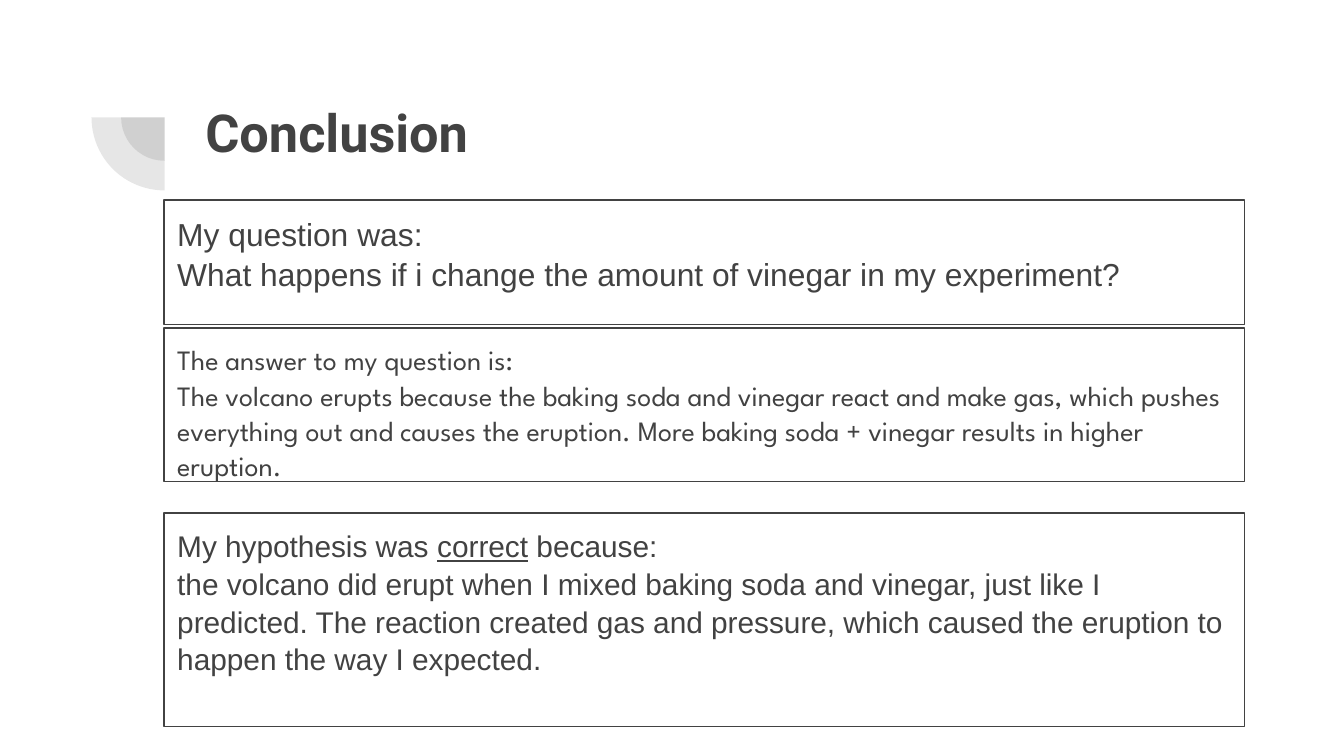
from lxml.etree import SubElement
from pptx import Presentation
from pptx.dml.color import RGBColor
from pptx.enum.shapes import MSO_SHAPE
from pptx.enum.text import MSO_ANCHOR, MSO_AUTO_SIZE, PP_ALIGN
from pptx.oxml.ns import qn
from pptx.util import Cm, Pt

# Content
HEADING = "Conclusion"
UNDERLINED = "correct"
STATEMENTS = [
    # top and height in cm, font, size, paragraphs made of runs
    (3.78, 2.36, "Arial", 17, [
        ["My question was:"],
        ["What happens if i change the amount of vinegar in my experiment?"],
    ]),
    (6.2, 2.9, "League Spartan", 15, [
        ["The answer to my question is:"],
        ["The volcano erupts because the baking soda and vinegar react and "
         "make gas, which pushes everything out and causes the eruption. "
         "More baking soda + vinegar results in higher eruption."],
    ]),
    (9.7, 4.04, "Arial", 16, [
        ["My hypothesis was ", UNDERLINED, " because:"],
        ["the volcano did erupt when I mixed baking soda and vinegar, just "
         "like I predicted. The reaction created gas and pressure, which "
         "caused the eruption to happen the way I expected."],
    ]),
]

# Format values
GREY = RGBColor(0x42, 0x42, 0x42)
INSET = Cm(0.25)
FRAME = {
    "margin_left": INSET, "margin_right": INSET,
    "margin_top": INSET, "margin_bottom": INSET,
    "word_wrap": True, "auto_size": MSO_AUTO_SIZE.NONE,
    "vertical_anchor": MSO_ANCHOR.TOP,
}
BOX_LEFT, BOX_WIDTH = 3.1, 20.42
ARC_CENTRE = (3.11, 2.22)
ARC_RADII = (0.82, 1.38)
ARC_ALPHA = "13000"


def apply(target, values):
    for name, value in values.items():
        setattr(target, name, value)


def write(frame, paragraphs, spacing, **font):
    apply(frame, FRAME)
    for index, runs in enumerate(paragraphs):
        paragraph = frame.add_paragraph() if index else frame.paragraphs[0]
        apply(paragraph, {"alignment": PP_ALIGN.LEFT, "line_spacing": spacing})
        for text in runs:
            run = paragraph.add_run()
            run.text = text
            apply(run.font, font)
            run.font.color.rgb = GREY
            if text == UNDERLINED:
                run.font.underline = True


presentation = Presentation()
apply(presentation, {"slide_width": Cm(25.4), "slide_height": Cm(14.29)})
slide = presentation.slides.add_slide(presentation.slide_layouts[5])

# Quarter-circle ornament: two translucent pies around one centre
for radius in ARC_RADII:
    arc = slide.shapes.add_shape(
        MSO_SHAPE.PIE, *(Cm(c - radius) for c in ARC_CENTRE),
        Cm(2 * radius), Cm(2 * radius))
    arc.adjustments[0], arc.adjustments[1] = 54, 108  # 90 to 180 degrees
    arc.shadow.inherit = False
    arc.line.fill.background()
    arc.fill.solid()
    arc.fill.fore_color.rgb = GREY
    tint = arc.fill._xPr.find(".//" + qn("a:srgbClr"))
    SubElement(tint, qn("a:alpha"), val=ARC_ALPHA)

# Title
title = slide.shapes.title
apply(title, {"left": Cm(3.63), "top": Cm(1.65),
              "width": Cm(19.53), "height": Cm(2.06)})
write(title.text_frame, [[HEADING]], 1.0,
      name="Roboto", size=Pt(28), bold=True)

# Statement boxes
for top, height, family, size, paragraphs in STATEMENTS:
    statement = slide.shapes.add_shape(
        MSO_SHAPE.RECTANGLE, Cm(BOX_LEFT), Cm(top), Cm(BOX_WIDTH), Cm(height))
    statement.shadow.inherit = False
    statement.fill.background()
    statement.line.color.rgb = GREY
    statement.line.width = Pt(0.75)
    write(statement.text_frame, paragraphs, 1.05, name=family, size=Pt(size))

presentation.save("out.pptx")
